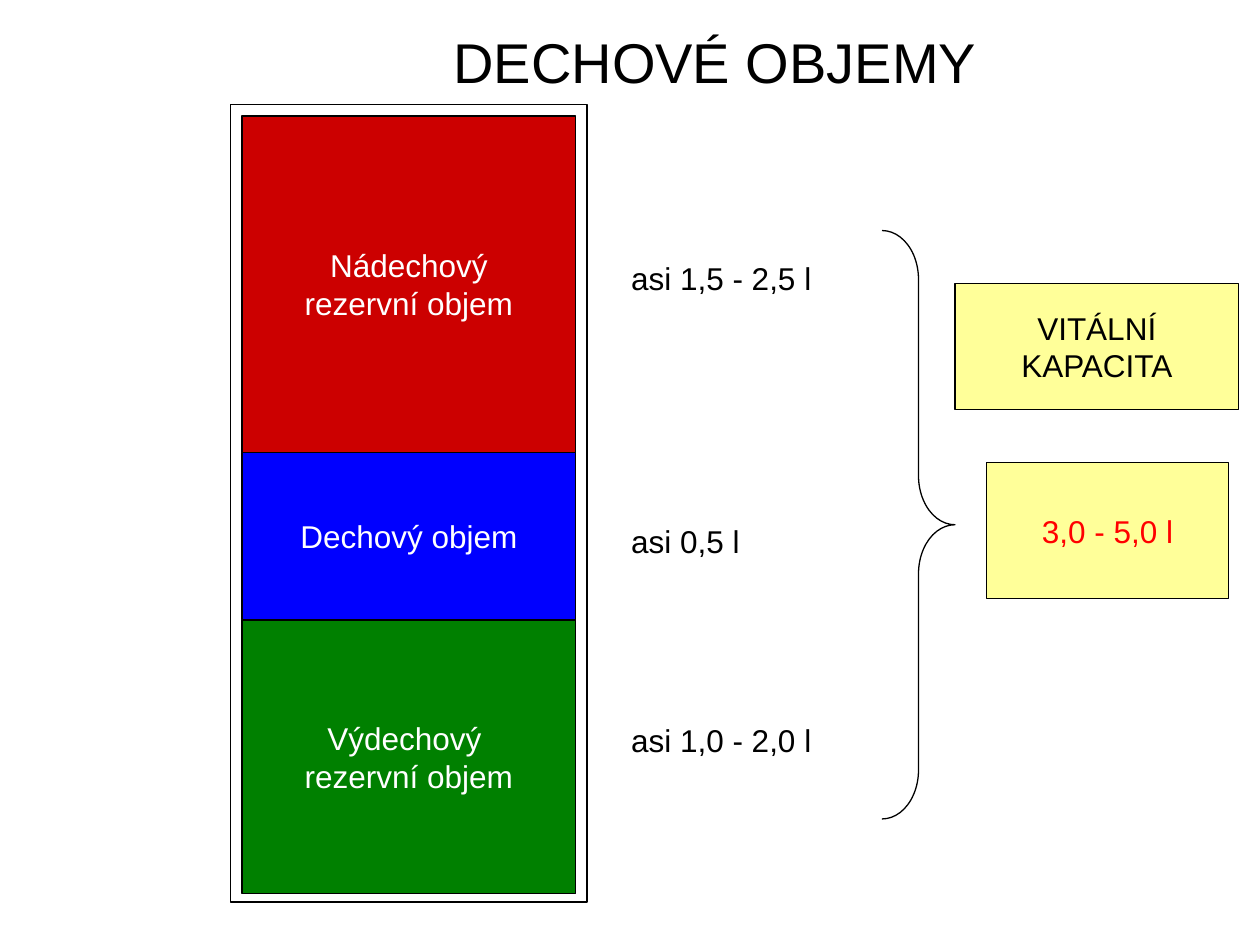
from pptx import Presentation
from pptx.dml.color import RGBColor
from pptx.enum.shapes import MSO_SHAPE as Shape
from pptx.enum.text import MSO_ANCHOR as Anchor, PP_ALIGN as Align
from pptx.util import Inches, Pt

COLOURS = {
    "ink": "000000", "white": "FFFFFF", "red": "CC0000", "blue": "0000FF",
    "green": "008000", "yellow": "FFFF99", "value": "FF0000",
}


def colour(name):
    return RGBColor.from_string(COLOURS[name])


def write(shape, lines, ink, size=18, align=Align.CENTER, anchor=Anchor.MIDDLE):
    frame = shape.text_frame
    frame.word_wrap = True
    frame.vertical_anchor = anchor
    for index, line in enumerate(lines):
        para = frame.paragraphs[0] if index == 0 else frame.add_paragraph()
        para.alignment = align
        span = para.add_run()
        span.text = line
        span.font.name = "Arial"
        span.font.size = Pt(size)
        span.font.color.rgb = colour(ink)


def add_outlined(page, kind, box, fill=None):
    shape = page.shapes.add_shape(kind, *map(Inches, box))
    shape.shadow.inherit = False
    if fill:
        shape.fill.solid()
        shape.fill.fore_color.rgb = colour(fill)
    else:
        shape.fill.background()
    shape.line.color.rgb = colour("ink")
    shape.line.width = Pt(0.75)
    return shape


def add_label(page, box, text, **style):
    label = page.shapes.add_textbox(*map(Inches, box))
    write(label, [text], "ink", align=Align.LEFT, **style)


def add_volume_column(page, box):
    """Stack the volumes inside a frame, each with its amount on the right."""
    left, top, width, height = box
    margin = 0.09
    # Lines, fill, block height, amount, offset of the amount's label
    volumes = [
        (["Nádechový", "rezervní objem"], "red", 2.67, "asi 1,5 - 2,5 l", 0.91),
        (["Dechový objem"], "blue", 1.33, "asi 0,5 l", 0.33),
        (["Výdechový ", "rezervní objem"], "green", 2.17, "asi 1,0 - 2,0 l", 0.58),
    ]
    block_top = top + margin
    for lines, fill, block_height, amount, offset in volumes:
        block = add_outlined(
            page, Shape.RECTANGLE,
            (left + margin, block_top, width - 2 * margin, block_height), fill)
        write(block, lines, "white")
        add_label(page, (left + width + 0.25, block_top + offset, 1.92, 0.75), amount)
        block_top += block_height
    add_outlined(page, Shape.RECTANGLE, box)


def add_vital_capacity(page, box):
    """Brace over all volumes, with the name and value of their sum."""
    left, top, width, height = box
    brace_width = 0.58
    brace = add_outlined(page, Shape.RIGHT_BRACE, (left, top, brace_width, height))
    brace.adjustments[0] = 0.67
    brace.adjustments[1] = 0.5

    right = left + brace_width
    value = add_outlined(page, Shape.RECTANGLE,
                         (right + 0.25, top + 1.84, 1.92, 1.08), "yellow")
    write(value, ["3,0 - 5,0 l"], "value")
    name = add_outlined(page, Shape.RECTANGLE,
                        (right, top + 0.42, width - brace_width, 1), "yellow")
    write(name, ["VITÁLNÍ", "KAPACITA"], "ink")


def main():
    deck = Presentation()
    deck.slide_width, deck.slide_height = Inches(10), Inches(7.5)
    page = deck.slides.add_slide(deck.slide_layouts[6])

    add_volume_column(page, (1.83, 0.83, 2.83, 6.33))
    add_vital_capacity(page, (7, 1.83, 2.83, 4.67))
    # Title
    add_label(page, (3.5, 0.17, 6.08, 0.63), "DECHOVÉ OBJEMY", size=32, anchor=Anchor.TOP)

    deck.save("out.pptx")


if __name__ == "__main__":
    main()
